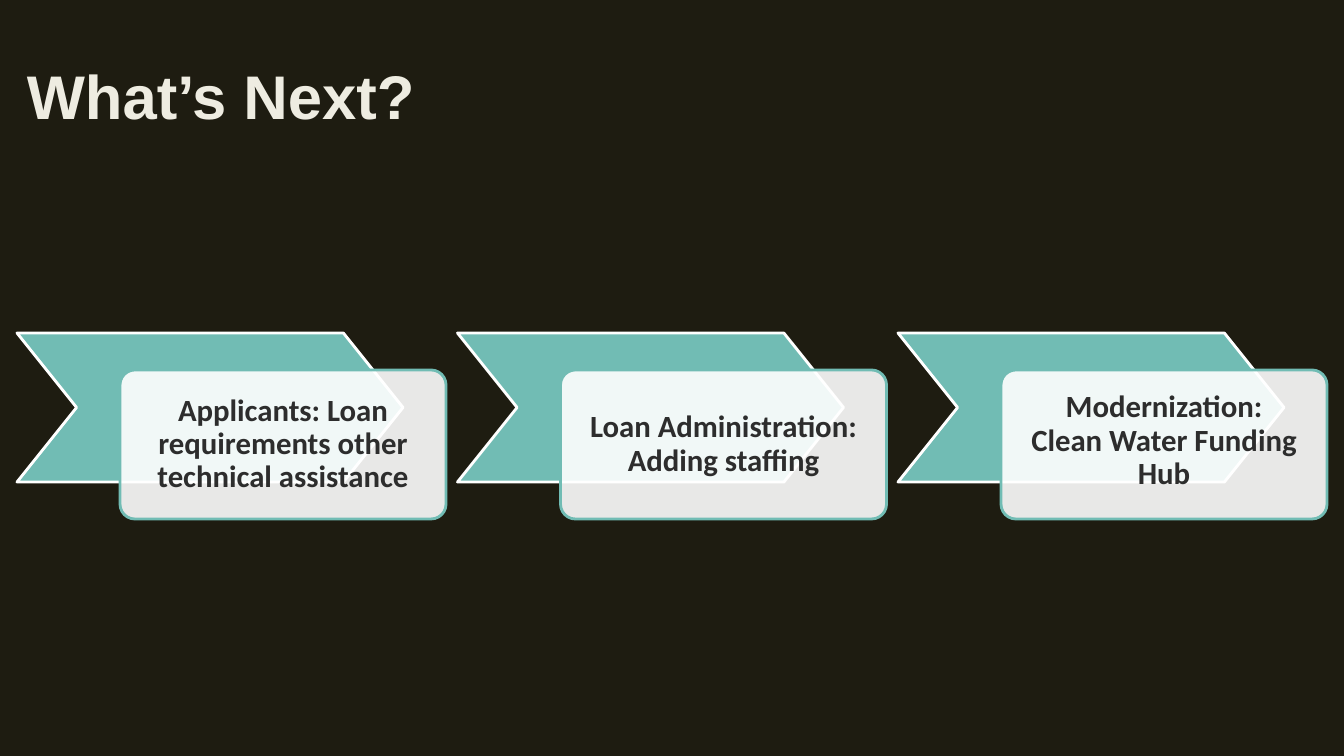
from lxml import etree
from pptx import Presentation
from pptx.dml.color import RGBColor
from pptx.enum.shapes import MSO_SHAPE
from pptx.enum.text import MSO_ANCHOR, PP_ALIGN
from pptx.oxml.ns import qn
from pptx.util import Pt

# Content
TITLE = "What’s Next?"
STEPS = [
    ("Applicants: Loan requirements other technical assistance", MSO_ANCHOR.MIDDLE),
    ("Loan Administration:\nAdding staffing", MSO_ANCHOR.MIDDLE),
    ("Modernization:\nClean Water Funding Hub", MSO_ANCHOR.TOP),
]
COLORS = {
    "background": "1E1C11",
    "title": "EEECE1",
    "teal": "71BCB4",
    "white": "FFFFFF",
    "text": "2D2D2D",
}

# Layout in px
SCALE = 914400 / 100.8
SLIDE_W, SLIDE_H = 1344, 756
TITLE_BOX = (17, 33, 1310, 123)
FIRST_LEFT, LAST_LEFT = 17, 898
CHEVRON_TOP, CHEVRON_W, STEP_H = 333, 386, 149
CARD_DX, CARD_DY, CARD_W = 103, 37, 326
CARD_INSET = 17


def px(length):
    return round(length * SCALE)


def color(name):
    return RGBColor.from_string(COLORS[name])


def write(shape, text, *, size, font, ink, anchor, align=PP_ALIGN.LEFT,
          spacing=1.0, inset=None):
    frame = shape.text_frame
    frame.word_wrap = True
    frame.vertical_anchor = anchor
    if inset is not None:
        frame.margin_left = frame.margin_right = px(inset)
        frame.margin_top = frame.margin_bottom = px(inset)
    paragraph = frame.paragraphs[0]
    paragraph.text = text
    paragraph.alignment = align
    paragraph.line_spacing = spacing
    for run in paragraph.runs:
        run.font.size = Pt(size)
        run.font.name = font
        run.font.bold = True
        run.font.color.rgb = color(ink)


def add_block(kind, box, adjustment, fill, line, opacity=100):
    block = slide.shapes.add_shape(kind, *map(px, box))
    block.adjustments[0] = adjustment
    block.shadow.inherit = False
    block.fill.solid()
    block.fill.fore_color.rgb = color(fill)
    block.line.color.rgb = color(line)
    block.line.width = Pt(2)
    if opacity < 100:
        fill_color = block.fill._xPr.find(qn("a:solidFill"))[0]
        etree.SubElement(fill_color, qn("a:alpha"), val=str(opacity * 1000))
    return block


prs = Presentation()
prs.slide_width, prs.slide_height = px(SLIDE_W), px(SLIDE_H)
slide = prs.slides.add_slide(prs.slide_layouts[6])
slide.background.fill.solid()
slide.background.fill.fore_color.rgb = color("background")

# Title
heading = slide.shapes.add_textbox(*map(px, TITLE_BOX))
write(heading, TITLE, size=44, font="Arial", ink="title", anchor=MSO_ANCHOR.MIDDLE)

# Steps: a chevron with an overlapping card
pitch = (LAST_LEFT - FIRST_LEFT) / (len(STEPS) - 1)
for index, (step, anchor) in enumerate(STEPS):
    left = FIRST_LEFT + index * pitch
    add_block(MSO_SHAPE.CHEVRON, (left, CHEVRON_TOP, CHEVRON_W, STEP_H),
              0.4, "teal", "white")
    card = add_block(MSO_SHAPE.ROUNDED_RECTANGLE,
                     (left + CARD_DX, CHEVRON_TOP + CARD_DY, CARD_W, STEP_H),
                     0.1, "white", "teal", opacity=90)
    write(card, step, size=22, font="Calibri", ink="text", anchor=anchor,
          align=PP_ALIGN.CENTER, spacing=0.9, inset=CARD_INSET)

prs.save("out.pptx")
